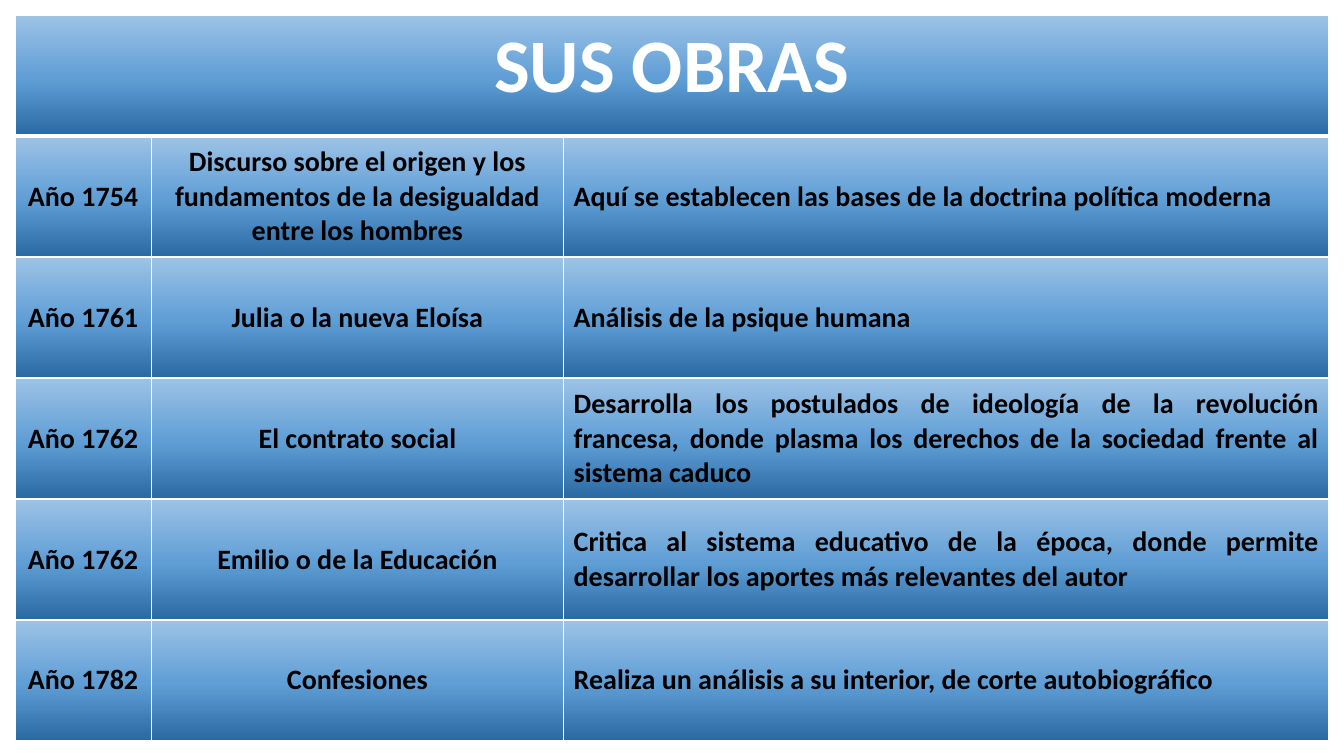
from lxml import etree
from pptx import Presentation
from pptx.dml.color import RGBColor
from pptx.enum.text import MSO_ANCHOR, PP_ALIGN
from pptx.oxml.ns import qn
from pptx.util import Inches, Pt

CENTER, JUSTIFY = PP_ALIGN.CENTER, PP_ALIGN.JUSTIFY
TOP, MIDDLE = MSO_ANCHOR.TOP, MSO_ANCHOR.MIDDLE
WHITE = RGBColor(0xFF, 0xFF, 0xFF)
BLACK = RGBColor(0, 0, 0)
DARK = RGBColor(0x2A, 0x69, 0xA2)
BLUE = RGBColor(0x60, 0x9E, 0xD6)
LIGHT = RGBColor(0x9D, 0xC3, 0xE6)
STOPS = [(0, DARK), (48, BLUE), (100, LIGHT)]
FONT = "Calibri"
WIDTHS = [1.35, 4.09, 7.59]
HEIGHT = 1.2
ALIGNS = [CENTER, CENTER, JUSTIFY]
WORKS = [
    ("Año 1754",
     "Discurso sobre el origen y los fundamentos de la desigualdad entre los hombres",
     "Aquí se establecen las bases de la doctrina política moderna"),
    ("Año 1761", "Julia o la nueva Eloísa", "Análisis de la psique humana"),
    ("Año 1762", "El contrato social",
     "Desarrolla los postulados de ideología de la revolución francesa, "
     "donde plasma los derechos de la sociedad frente al sistema caduco"),
    ("Año 1762", "Emilio o de la Educación",
     "Critica al sistema educativo de la época, donde permite desarrollar "
     "los aportes más relevantes del autor"),
    ("Año 1782", "Confesiones",
     "Realiza un análisis a su interior, de corte autobiográfico"),
]


def add_node(parent, tag, **attrs):
    return etree.SubElement(parent, qn(tag), attrs)


def add_color(parent, color):
    add_node(parent, "a:srgbClr", val=str(color))


def set_edges(cell, top, bottom):
    props = cell._tc.get_or_add_tcPr()
    for side, width in zip("LRTB", (1, 1, top, bottom)):
        line = add_node(props, f"a:ln{side}", w=str(Pt(width)))
        add_color(add_node(line, "a:solidFill"), WHITE)


def set_fill(cell):
    grad = add_node(cell._tc.get_or_add_tcPr(), "a:gradFill", rotWithShape="1")
    stops = add_node(grad, "a:gsLst")
    for place, color in STOPS:
        add_color(add_node(stops, "a:gs", pos=str(place * 1000)), color)
    add_node(grad, "a:lin", ang=str(270 * 60000), scaled="0")


def set_text(cell, text, size, color, align, anchor):
    cell.text_frame.text = text
    cell.vertical_anchor = anchor
    para = cell.text_frame.paragraphs[0]
    para.alignment = align
    font = para.runs[0].font
    font.name, font.size, font.bold = FONT, Pt(size), True
    font.color.rgb = color


def add_grid(slide):
    count = len(WORKS) + 1
    frame = slide.shapes.add_table(
        count, len(WIDTHS), Inches(0.15), Inches(0.15),
        Inches(sum(WIDTHS)), Inches(HEIGHT * count))
    table = frame.table
    for col, width in zip(table.columns, WIDTHS):
        col.width = Inches(width)
    for index, row in enumerate(table.rows):
        row.height = Inches(HEIGHT)
        for cell in row.cells:
            set_edges(cell, 3 if index == 1 else 1, 3 if index == 0 else 1)
            set_fill(cell)
    return table


def main():
    deck = Presentation()
    deck.slide_width, deck.slide_height = Inches(13.33), Inches(7.5)
    slide = deck.slides.add_slide(deck.slide_layouts[6])
    table = add_grid(slide)
    head = table.cell(0, 0)
    head.merge(table.cell(0, len(WIDTHS) - 1))
    set_text(head, "SUS OBRAS", 54, WHITE, CENTER, TOP)
    for row, work in enumerate(WORKS, 1):
        for col, (text, align) in enumerate(zip(work, ALIGNS)):
            set_text(table.cell(row, col), text, 20, BLACK, align, MIDDLE)
    deck.save("out.pptx")


if __name__ == "__main__":
    main()
